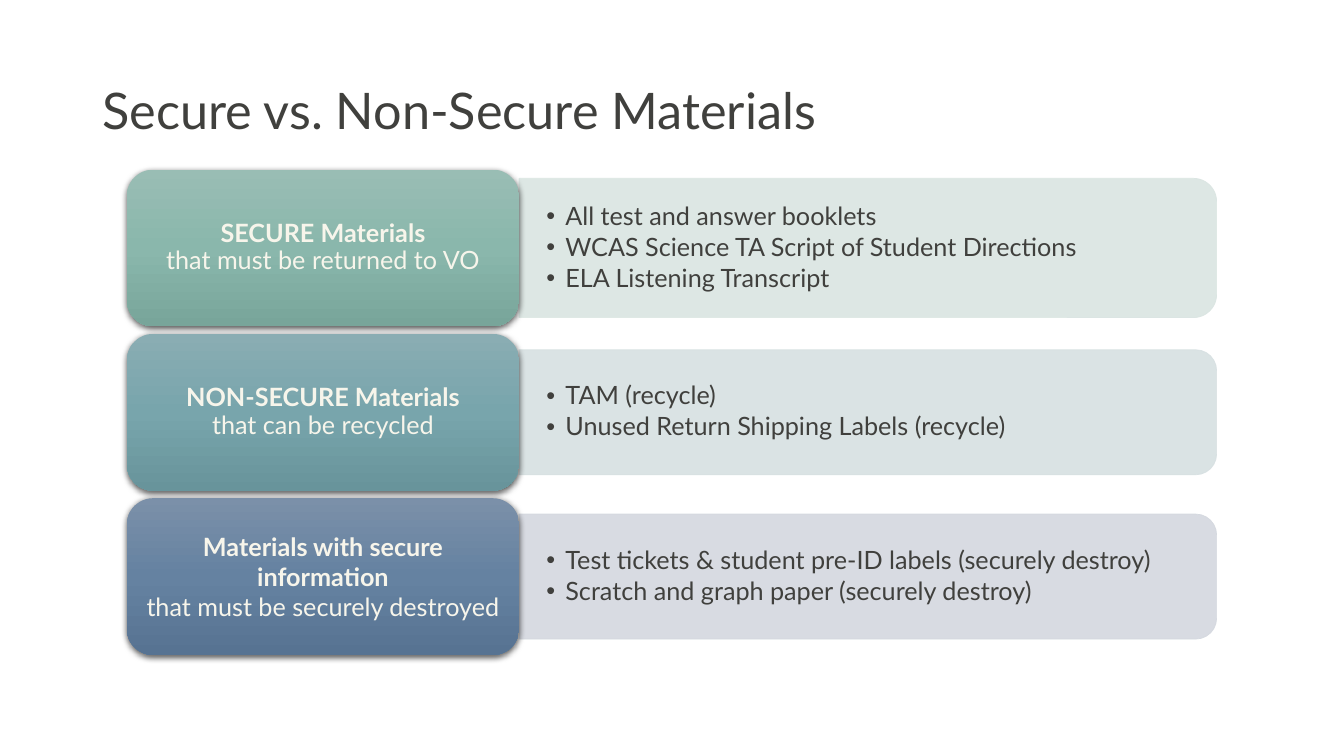
import dataclasses

import pptx
import pptx.dml.color
import pptx.enum.shapes
import pptx.enum.text
import pptx.oxml
import pptx.oxml.ns
import pptx.util
from pptx.util import Cm

SHAPE = pptx.enum.shapes.MSO_SHAPE
ALIGN = pptx.enum.text.PP_ALIGN
FONT = "Lato"
COLORS = {"text": "40403D", "label": "F7F5EB", "shadow": "000000"}

# Lengths in centimetres
LABEL_LEFT, LABEL_WIDTH, LABEL_HEIGHT = 3.2, 9.88, 3.95
PANEL_LEFT, PANEL_WIDTH = 13.08, 17.58
FIRST_CENTER, ROW_PITCH = 6.25, 4.14
BULLET_INDENT = 0.48


@dataclasses.dataclass(frozen=True)
class Category:
    heading: str
    action: str
    items: tuple[str, ...]
    gradient: tuple[str, str, str]
    panel_color: str
    panel_height: float
    label_spacing: float = 0.9


CATEGORIES = (
    Category("SECURE Materials", "that must be returned to VO",
             ("All test and answer booklets",
              "WCAS Science TA Script of Student Directions",
              "ELA Listening Transcript"),
             ("99BDB4", "8AB7AC", "78A59A"), "DAE5E2", 3.51),
    Category("NON-SECURE Materials", "that can be recycled",
             ("TAM (recycle)", "Unused Return Shipping Labels (recycle)"),
             ("8AADB3", "78A5AC", "68949B"), "D7E0E2", 3.15),
    Category("Materials with secure information", "that must be securely destroyed",
             ("Test tickets & student pre-ID labels (securely destroy)",
              "Scratch and graph paper (securely destroy)"),
             ("7B90A9", "6582A1", "577392"), "D4D8DF", 3.15, 1.0),
)


def rgb(value: str) -> pptx.dml.color.RGBColor:
    return pptx.dml.color.RGBColor.from_string(value)


def xml(source: str):
    """Build a drawing element whose root tag takes the namespace."""
    tag, rest = source.split(">", 1)
    return pptx.oxml.parse_xml(f"{tag} {pptx.oxml.ns.nsdecls('a')}>{rest}")


def write(p, text: str, *, size: float = 18, color: str = COLORS["text"],
          bold: bool = False, align=ALIGN.LEFT, spacing: float = 0.9,
          after: float = 0, bullet: bool = False) -> None:
    if bullet:
        p.level = 1
        pPr = p._p.get_or_add_pPr()
        pPr.set("marL", str(Cm(BULLET_INDENT)))
        pPr.set("indent", str(-Cm(BULLET_INDENT)))
        pPr.append(xml('<a:buFont typeface="Arial"></a:buFont>'))
        pPr.append(xml('<a:buChar char="•"></a:buChar>'))
    p.alignment = align
    p.line_spacing = spacing
    p.space_before = pptx.util.Pt(0)
    p.space_after = pptx.util.Pt(after)
    r = p.add_run()
    r.text = text
    r.font.name = FONT
    r.font.size = pptx.util.Pt(size)
    r.font.bold = bold
    r.font.color.rgb = rgb(color)


def prepare_frame(tf, inset_x: float, inset_y: float) -> None:
    tf.word_wrap = True
    tf.vertical_anchor = pptx.enum.text.MSO_ANCHOR.MIDDLE
    tf.margin_left = tf.margin_right = Cm(inset_x)
    tf.margin_top = tf.margin_bottom = Cm(inset_y)


def draw_panel(s, category: Category, center: float) -> None:
    # The shape's rounded top is turned to face right
    height = category.panel_height
    sp = s.shapes.add_shape(
        SHAPE.ROUND_2_SAME_RECTANGLE,
        Cm(PANEL_LEFT + (PANEL_WIDTH - height) / 2), Cm(center - PANEL_WIDTH / 2),
        Cm(height), Cm(PANEL_WIDTH))
    sp.rotation = 90
    sp.shadow.inherit = False
    sp.line.width = pptx.util.Pt(0.5)
    for fill in (sp.fill, sp.line.fill):
        fill.solid()
        fill.fore_color.rgb = rgb(category.panel_color)
    for color in sp._element.spPr.iter(pptx.oxml.ns.qn("a:srgbClr")):
        color.append(xml('<a:alpha val="90000"></a:alpha>'))

    # Bulleted items
    text_height = height - 0.32
    box = s.shapes.add_textbox(Cm(PANEL_LEFT), Cm(center - text_height / 2),
                               Cm(PANEL_WIDTH - 0.16), Cm(text_height))
    tf = box.text_frame
    prepare_frame(tf, 0.69, 0.36)
    for i, item in enumerate(category.items):
        p = tf.add_paragraph() if i else tf.paragraphs[0]
        write(p, item, after=2.7, bullet=True)


def draw_label(s, category: Category, center: float) -> None:
    sp = s.shapes.add_shape(SHAPE.ROUNDED_RECTANGLE, Cm(LABEL_LEFT),
                            Cm(center - LABEL_HEIGHT / 2),
                            Cm(LABEL_WIDTH), Cm(LABEL_HEIGHT))
    # Vertical gradient and soft shadow
    stops = "".join(f'<a:gs pos="{i * 50000}"><a:srgbClr val="{color}"/></a:gs>'
                    for i, color in enumerate(category.gradient))
    spPr = sp._element.spPr
    spPr.append(xml(f'<a:gradFill><a:gsLst>{stops}</a:gsLst>'
                    '<a:lin ang="5400000" scaled="0"/></a:gradFill>'))
    sp.line.fill.background()
    sp.shadow.inherit = False
    blur, distance = pptx.util.Pt(4.5), pptx.util.Pt(1.5)
    spPr.find(pptx.oxml.ns.qn("a:effectLst")).append(xml(
        f'<a:outerShdw blurRad="{blur}" dist="{distance}" dir="5400000" rotWithShape="0">'
        f'<a:srgbClr val="{COLORS["shadow"]}"><a:alpha val="63000"/></a:srgbClr>'
        '</a:outerShdw>'))

    tf = sp.text_frame
    prepare_frame(tf, 0.19, 0.1)
    style = dict(color=COLORS["label"], align=ALIGN.CENTER,
                 spacing=category.label_spacing)
    write(tf.paragraphs[0], category.heading, bold=True, **style)
    write(tf.add_paragraph(), category.action, **style)


def main() -> None:
    prs = pptx.Presentation()
    prs.slide_width, prs.slide_height = Cm(33.87), Cm(19.05)
    s = prs.slides.add_slide(prs.slide_layouts[5])

    # Title
    title = s.shapes.title
    title.left, title.top, title.width, title.height = Cm(2.33), Cm(1), Cm(29.21), Cm(3.68)
    prepare_frame(title.text_frame, 0.25, 0.13)
    write(title.text_frame.paragraphs[0], "Secure vs. Non-Secure Materials", size=36)

    # One row per category
    for i, category in enumerate(CATEGORIES):
        center = FIRST_CENTER + i * ROW_PITCH
        draw_panel(s, category, center)
        draw_label(s, category, center)

    prs.save("out.pptx")


if __name__ == "__main__":
    main()
